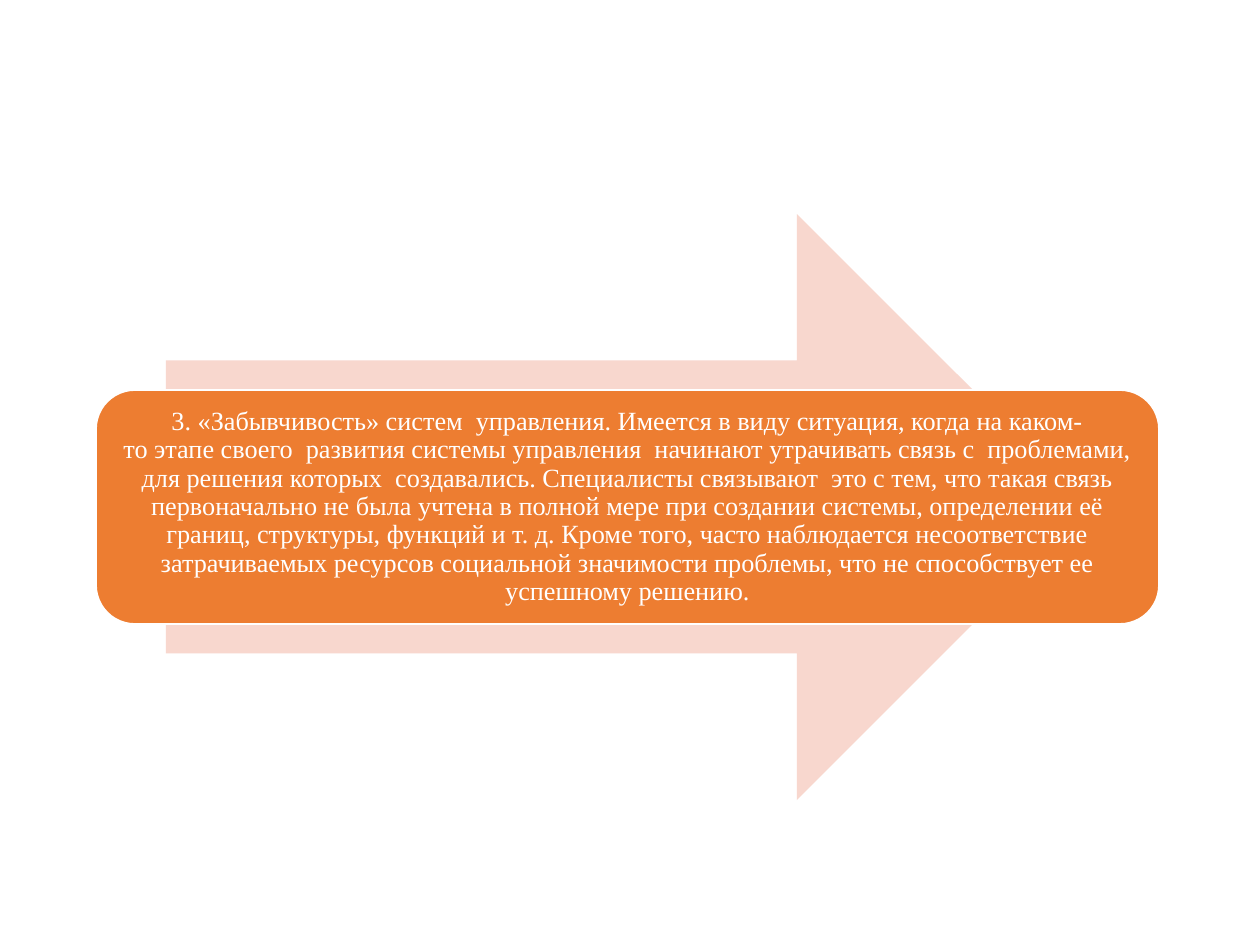
from dataclasses import dataclass

from pptx import Presentation
from pptx.dml.color import RGBColor
from pptx.enum.shapes import MSO_SHAPE
from pptx.enum.text import MSO_ANCHOR, PP_ALIGN
from pptx.util import Emu, Pt

ARROW = MSO_SHAPE.RIGHT_ARROW
ROUNDED = MSO_SHAPE.ROUNDED_RECTANGLE
MIDDLE = MSO_ANCHOR.MIDDLE
CENTER = PP_ALIGN.CENTER
BLANK_LAYOUT = 6
PX_PER_INCH = 126
NO_BREAK_SPACE = chr(160)

# "~" marks a no-break space.
STATEMENT = (
    "3. «Забывчивость»~систем~ управления. Имеется~в~виду~ситуация, "
    "когда~на~каком-то~этапе~своего~ развития~системы~управления~ "
    "начинают~утрачивать~связь~с~ проблемами, для~решения~которых~ "
    "создавались.~Специалисты~связывают~ это~с~тем, "
    "что такая связь первоначально не была учтена в полной мере при создании "
    "системы, определении её границ, структуры, функций и т. д. Кроме того, "
    "часто наблюдается несоответствие затрачиваемых ресурсов социальной "
    "значимости проблемы, что не способствует ее успешному решению."
).replace("~", NO_BREAK_SPACE)


@dataclass(frozen=True)
class Theme:
    arrow: RGBColor = RGBColor(0xF8, 0xD7, 0xCE)
    box: RGBColor = RGBColor(0xED, 0x7D, 0x31)
    white: RGBColor = RGBColor(0xFF, 0xFF, 0xFF)
    font: str = "Times New Roman"
    body: Pt = Pt(15)
    outline: Pt = Pt(1)


THEME = Theme()


def px(n):
    return Emu(round(n * 914400 / PX_PER_INCH))


def add_block(s, kind, bounds, fill, line=None):
    """Add a flat filled shape, outlined only when a line colour is given."""
    sp = s.shapes.add_shape(kind, *map(px, bounds))
    sp.shadow.inherit = False
    sp.fill.solid()
    sp.fill.fore_color.rgb = fill
    if line is None:
        sp.line.fill.background()
    else:
        sp.line.color.rgb = line
        sp.line.width = THEME.outline
    return sp


def set_text(sp, text, inset):
    tf = sp.text_frame
    tf.word_wrap = True
    tf.vertical_anchor = MIDDLE
    tf.margin_left = tf.margin_right = px(inset)
    tf.margin_top = tf.margin_bottom = px(inset)
    p = tf.paragraphs[0]
    p.text = text
    p.alignment = CENTER
    p.line_spacing = 0.9
    p.font.name = THEME.font
    p.font.size = THEME.body
    p.font.color.rgb = THEME.white


def main():
    prs = Presentation()
    prs.slide_width, prs.slide_height = px(1260), px(945)
    s = prs.slides.add_slide(prs.slide_layouts[BLANK_LAYOUT])
    add_block(s, ARROW, (166, 214, 924, 586), THEME.arrow)
    box = add_block(s, ROUNDED, (96, 390, 1063, 234), THEME.box, THEME.white)
    set_text(box, STATEMENT, 8)
    prs.save("out.pptx")


if __name__ == "__main__":
    main()
